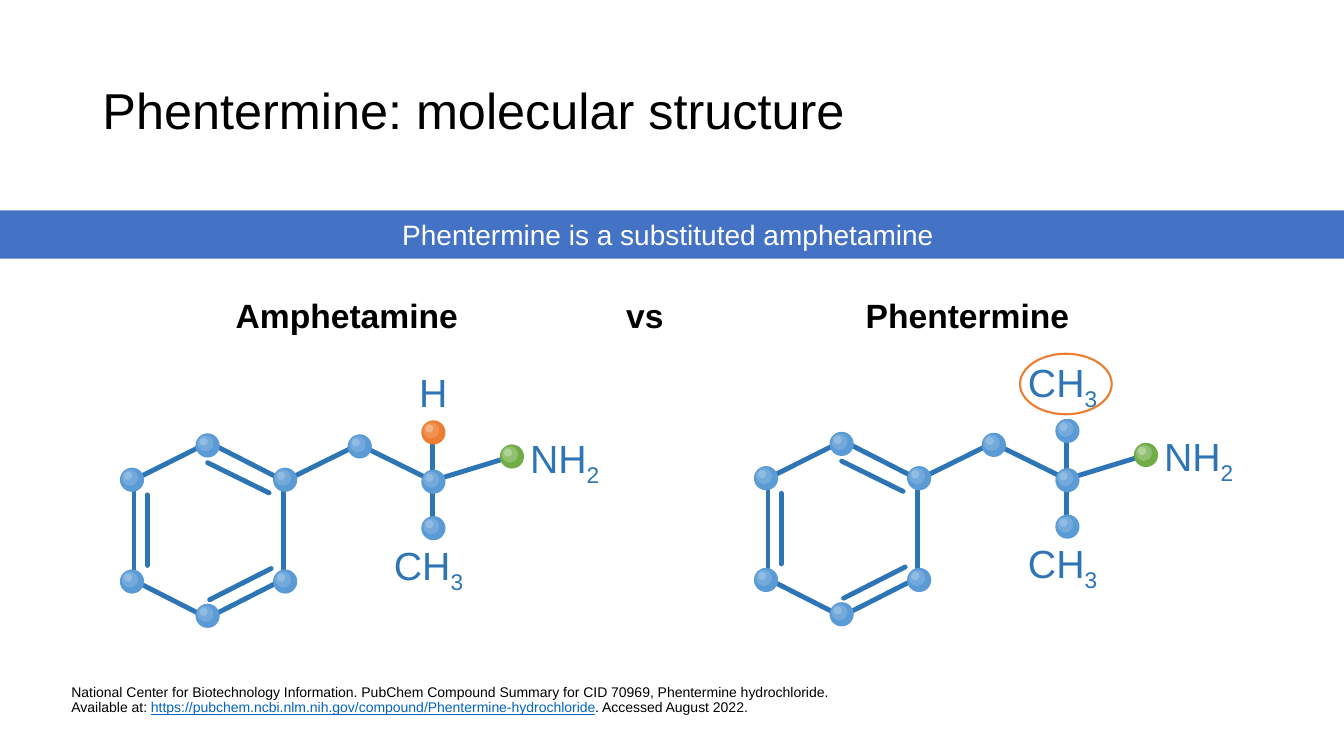
import dataclasses

import lxml.etree
import pptx
import pptx.dml.color
import pptx.enum.shapes
import pptx.enum.text
import pptx.oxml.ns
import pptx.util

Pt = pptx.util.Pt
qn = pptx.oxml.ns.qn
SHAPE = pptx.enum.shapes.MSO_SHAPE
ALIGN = pptx.enum.text.PP_ALIGN
ANCHOR = pptx.enum.text.MSO_ANCHOR


@dataclasses.dataclass(frozen=True)
class Theme:
    font: str = "Arial"
    text: str = "000000"
    light: str = "FFFFFF"
    band: str = "4472C4"
    bond: str = "2E75B6"
    link: str = "0563C1"
    ring: str = "ED7D31"
    carbon: tuple = ("5B9BD5", "9DC3E6", "BDD7EE")
    hydrogen: tuple = ("ED7D31", "F4B183", "FBE5D6")
    nitrogen: tuple = ("70AD47", "C5E0B4", "E2F0D9")
    title_size: int = 36
    label_size: int = 28
    heading_size: int = 24
    band_size: int = 20
    source_size: int = 10
    bond_width: float = 3.5
    ring_width: float = 1.5
    gloss_opacity: int = 39


class Deck:
    def __init__(self, slide, theme):
        self.slide = slide
        self.theme = theme
        self.shapes = slide.shapes
        self.origin = (0, 0)

    def start_group(self, x, y):
        self.shapes = self.slide.shapes.add_group_shape().shapes
        self.origin = (x, y)

    def point(self, x, y):
        return Pt(self.origin[0] + x), Pt(self.origin[1] + y)

    def color(self, value):
        return pptx.dml.color.RGBColor.from_string(value)

    def run(self, p, text, size, color, bold=False, underline=False, subscript=False):
        r = p.add_run()
        r.text = text
        r.font.name = self.theme.font
        r.font.size = Pt(size)
        r.font.color.rgb = self.color(color)
        r.font.bold = bold
        r.font.underline = underline
        if subscript:
            r._r.get_or_add_rPr().set("baseline", "-25000")

    def title(self, text, x, y, w, h):
        sp = self.slide.shapes.title
        sp.left, sp.top, sp.width, sp.height = Pt(x), Pt(y), Pt(w), Pt(h)
        tf = sp.text_frame
        tf.vertical_anchor = ANCHOR.MIDDLE
        p = tf.paragraphs[0]
        p.alignment = ALIGN.LEFT
        p.line_spacing = 0.9
        self.run(p, text, self.theme.title_size, self.theme.text)

    def text_box(self, x, y, w, h, align=ALIGN.LEFT):
        tf = self.shapes.add_textbox(*self.point(x, y), Pt(w), Pt(h)).text_frame
        tf.word_wrap = True
        p = tf.paragraphs[0]
        p.alignment = align
        return tf, p

    def heading(self, text, x, w, align=ALIGN.LEFT):
        tf, p = self.text_box(x, 207.4, w, 36, align)
        self.run(p, text, self.theme.heading_size, self.theme.text, bold=True)

    def formula(self, symbol, count, x, y):
        tf, p = self.text_box(x, y, 70, 41)
        self.run(p, symbol, self.theme.label_size, self.theme.bond)
        if count:
            self.run(p, count, self.theme.label_size, self.theme.bond, subscript=True)

    def source(self, first, lead, address, end, x, y, w, h):
        tf, p = self.text_box(x, y, w, h)
        tf.margin_left = tf.margin_right = tf.margin_top = tf.margin_bottom = 0
        tf.vertical_anchor = ANCHOR.BOTTOM
        p.line_spacing = 0.9
        size, color = self.theme.source_size, self.theme.text
        self.run(p, first, size, color)
        p.add_line_break()
        self.run(p, lead, size, color)
        self.run(p, address, size, self.theme.link, underline=True)
        self.run(p, end, size, color)

    def shape(self, kind, x, y, w, h, fill=None, line=None, opacity=None):
        sp = self.shapes.add_shape(kind, *self.point(x, y), Pt(w), Pt(h))
        sp.shadow.inherit = False
        if fill:
            sp.fill.solid()
            sp.fill.fore_color.rgb = self.color(fill)
        else:
            sp.fill.background()
        if line:
            sp.line.color.rgb = self.color(line)
            sp.line.width = Pt(self.theme.ring_width)
        else:
            sp.line.fill.background()
        if opacity:
            rgb = sp._element.spPr.find(qn("a:solidFill")).find(qn("a:srgbClr"))
            lxml.etree.SubElement(rgb, qn("a:alpha")).set("val", str(opacity * 1000))
        return sp

    def band(self, text, y, w, h):
        sp = self.shape(SHAPE.RECTANGLE, 0, y, w, h, self.theme.band)
        tf = sp.text_frame
        tf.vertical_anchor = ANCHOR.MIDDLE
        p = tf.paragraphs[0]
        p.alignment = ALIGN.CENTER
        self.run(p, text, self.theme.band_size, self.theme.light)

    def bond_line(self, line):
        line.color.rgb = self.color(self.theme.bond)
        line.width = Pt(self.theme.bond_width)
        line._get_or_add_ln().set("cap", "rnd")

    def bond(self, x1, y1, x2, y2):
        cx = self.shapes.add_connector(pptx.enum.shapes.MSO_CONNECTOR.STRAIGHT,
                                       *self.point(x1, y1), *self.point(x2, y2))
        self.bond_line(cx.line)
        lxml.etree.SubElement(cx._element.spPr, qn("a:effectLst"))

    def chain(self, points):
        start, *rest = [self.point(x, y) for x, y in points]
        builder = self.shapes.build_freeform(*start)
        builder.add_line_segments(rest, close=False)
        sp = builder.convert_to_shape()
        sp.shadow.inherit = False
        sp.fill.background()
        self.bond_line(sp.line)

    def atom(self, x, y, colors):
        opacities = (None, self.theme.gloss_opacity, self.theme.gloss_opacity)
        for color, d, inset, opacity in zip(colors, (17.3, 11.5, 5.8), (0, 1.4, 2.9), opacities):
            corner = inset - 8.65
            self.shape(SHAPE.OVAL, x + corner, y + corner, d, d, color, opacity=opacity)

    def molecule(self, x, y, top_colors, top_label):
        self.start_group(x, y)
        self.chain(SIDE_CHAIN)
        for ends in BONDS:
            self.bond(*ends)
        for center in CARBONS:
            self.atom(*center, self.theme.carbon)
        self.atom(215.3, -33.8, top_colors)
        self.atom(271.4, -16.6, self.theme.nitrogen)
        for label in (top_label, ("CH", "3", 180, 40.3), ("NH", "2", 277.2, -36)):
            self.formula(*label)


SIDE_CHAIN = [(112.3, -0.7), (162, -25.2), (214.6, 0.7), (268.6, -15.8)]
BONDS = [
    (214.6, -27.4, 214.6, 31.7),
    (5.8, 74.2, 49.7, 96.5),
    (49, -23.8, 4.3, -1.4),
    (102.2, 74.2, 58.3, 96.5),
    (1.4, 8.6, 1.4, 67.7),
    (108, 8.6, 108, 67.7),
    (60.5, -23.8, 104.4, -1.4),
    (99.4, 63.4, 55.4, 85.7),
    (54, -12.2, 97.9, 9.4),
    (10.8, 10.8, 10.8, 61.2),
]
CARBONS = [(54, -24.5), (0, 0), (0, 72.7), (54, 97.2), (109.4, 0), (109.4, 72.7),
           (162.7, -23.8), (215.3, 1.4), (215.3, 34.6)]


def main():
    prs = pptx.Presentation()
    prs.slide_width, prs.slide_height = Pt(960), Pt(540)
    theme = Theme()
    deck = Deck(prs.slides.add_slide(prs.slide_layouts[5]), theme)
    deck.title("Phentermine: molecular structure", 66, 28.8, 828, 104.4)
    deck.band("Phentermine is a substituted amphetamine ", 150.2, 960, 34.5)
    deck.heading("vs ", 429.8, 68.4, ALIGN.CENTER)
    deck.heading("Amphetamine", 161.3, 203.8)
    deck.heading("Phentermine", 611.3, 203.8)
    deck.source(
        "National Center for Biotechnology Information. PubChem Compound Summary "
        "for CID 70969, Phentermine hydrochloride. ",
        "Available at: ",
        "https://pubchem.ncbi.nlm.nih.gov/compound/Phentermine-hydrochloride",
        ". Accessed August 2022.", 51, 489, 843, 22.3)
    deck.molecule(94.3, 342.7, theme.hydrogen, ("H", "", 198, -83.5))
    deck.molecule(547.2, 341.6, theme.carbon, ("CH", "3", 180, -88.9))
    deck.shape(SHAPE.OVAL, 181.4, -88.9, 65.5, 43.2, line=theme.ring)
    prs.save("out.pptx")


if __name__ == "__main__":
    main()
